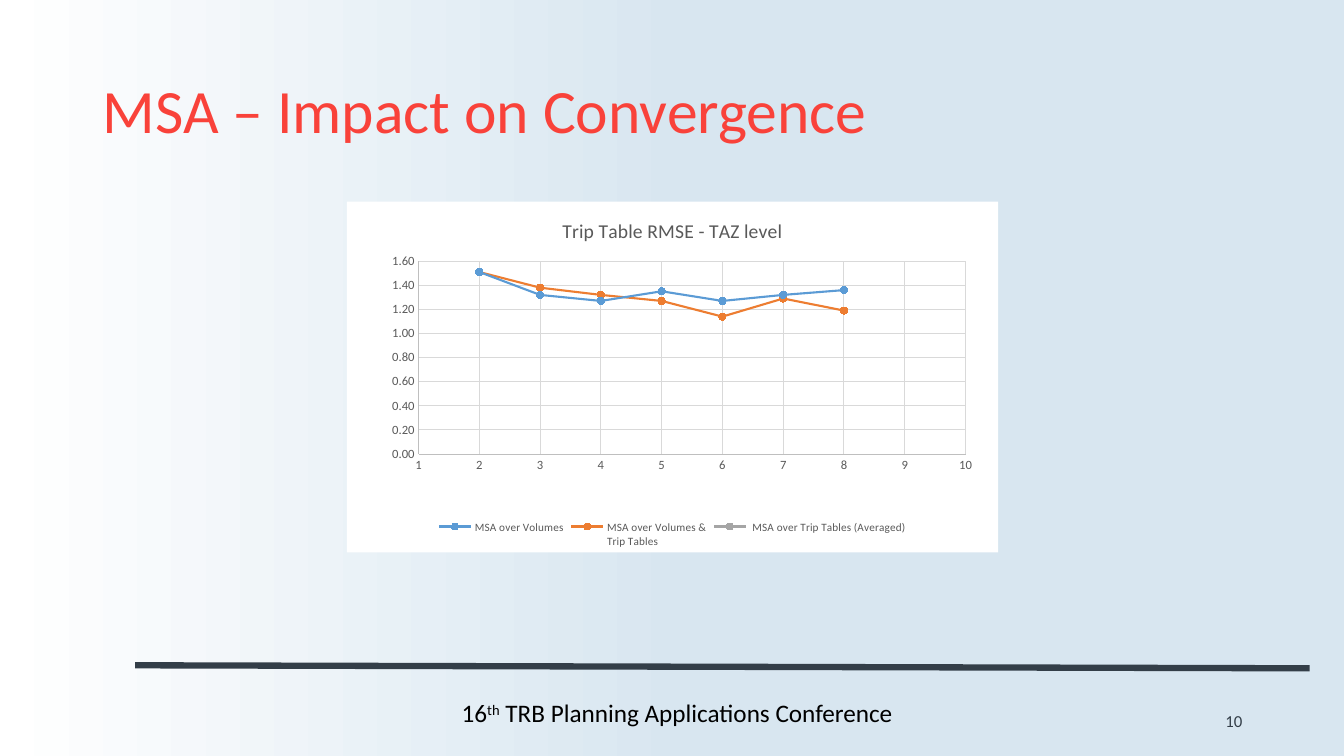
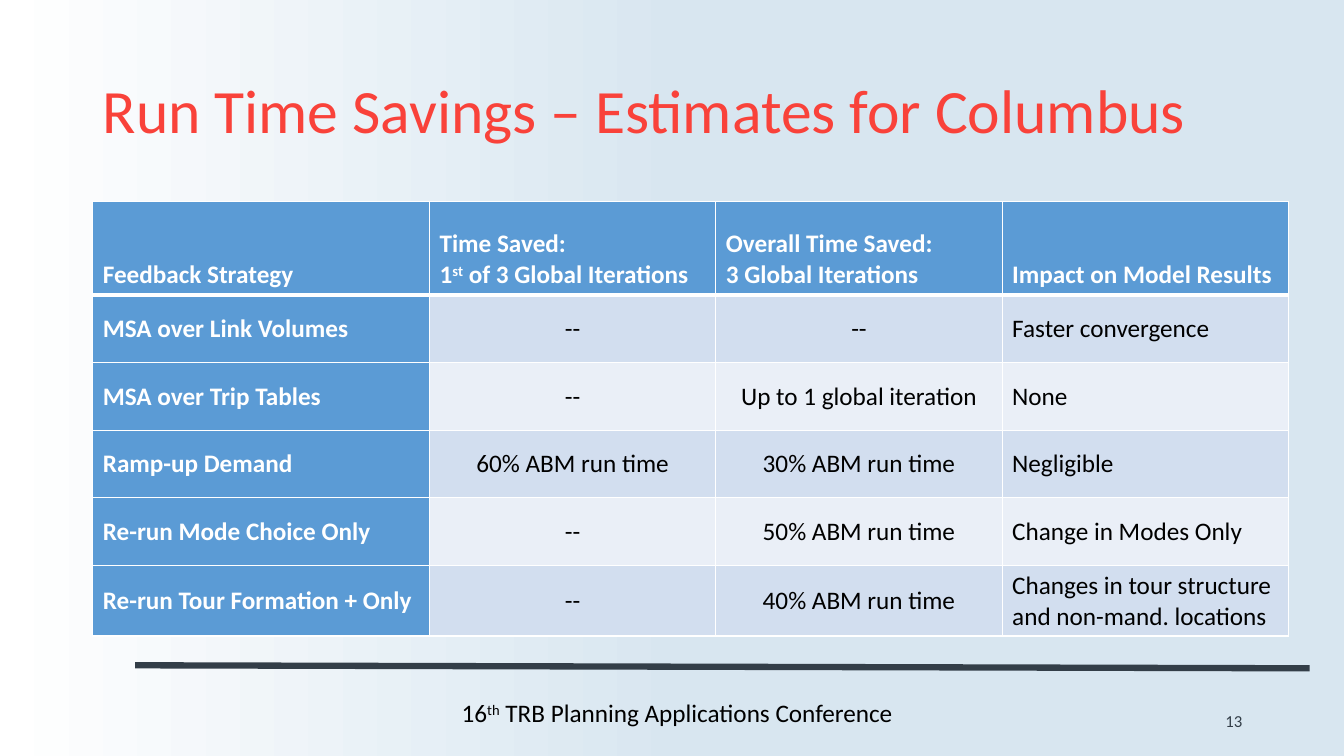
from copy import deepcopy
from dataclasses import dataclass

from lxml import etree
from pptx import Presentation
from pptx.chart.data import XyChartData
from pptx.dml.color import RGBColor
from pptx.enum.chart import XL_CHART_TYPE as ChartType
from pptx.enum.chart import XL_LEGEND_POSITION as LegendPosition
from pptx.enum.chart import XL_MARKER_STYLE as MarkerStyle
from pptx.enum.chart import XL_TICK_MARK as TickMark
from pptx.enum.shapes import MSO_CONNECTOR as Connector
from pptx.enum.text import MSO_ANCHOR as Anchor
from pptx.enum.text import MSO_AUTO_SIZE as AutoSize
from pptx.enum.text import PP_ALIGN as Align
from pptx.oxml.ns import qn
from pptx.util import Pt

EMU_PER_PX = 9144  # 100 px to the inch


@dataclass(frozen=True)
class Theme:
    font: str = "Calibri"
    white: str = "FFFFFF"
    black: str = "000000"
    mist: str = "D8E6F0"
    red: str = "F9423A"
    slate: str = "333E48"
    blue: str = "5B9BD5"
    orange: str = "ED7D31"
    gray: str = "A5A5A5"
    chart_text: str = "595959"
    axis: str = "BFBFBF"
    grid: str = "D9D9D9"
    bands: tuple = ("D2DEEF", "EAEFF7")
    title_size: int = 44
    body_size: int = 18
    chart_title_size: int = 14
    number_size: int = 12
    chart_size: int = 10
    axis_size: int = 9
    legend_size: int = 8


THEME = Theme()

# Content
ITERATIONS = range(2, 9)
RMSE_SERIES = [
    ("MSA over Volumes", THEME.blue,
     [1.51, 1.32, 1.27, 1.35, 1.27, 1.32, 1.36]),
    ("MSA over Volumes &\nTrip Tables", THEME.orange,
     [1.51, 1.38, 1.32, 1.27, 1.14, 1.29, 1.19]),
    (" MSA over Trip Tables (Averaged)", THEME.gray,
     [None] * len(ITERATIONS)),
]
# Text between carets is superscript
CONFERENCE = "16^th^ TRB Planning Applications Conference"
SAVINGS = [
    ("Feedback Strategy", "Time Saved:\n1^st^ of 3 Global Iterations",
     "Overall Time Saved:\n3 Global Iterations", "Impact on Model Results"),
    ("MSA over Link Volumes", "--", "--", "Faster convergence"),
    ("MSA over Trip Tables", "--", "Up to 1 global iteration", "None"),
    ("Ramp-up Demand", "60% ABM run time", "30% ABM run time", "Negligible"),
    ("Re-run Mode Choice Only", "--", "50% ABM run time",
     "Change in Modes Only"),
    ("Re-run Tour Formation + Only", "--", "40% ABM run time",
     "Changes in tour structure and non-mand. locations"),
]


# Shared helpers
def px(*lengths):
    return [length * EMU_PER_PX for length in lengths]


def rgb(color):
    return RGBColor.from_string(color)


def style_font(font, size, color, bold=False):
    font.name = THEME.font
    font.size = Pt(size)
    font.bold = bold
    font.color.rgb = rgb(color)


def style_line(line, color, width):
    line.color.rgb = rgb(color)
    line.width = Pt(width)


def write_text(frame, text, size, color, bold=False, align=Align.LEFT,
               line_spacing=None):
    for index, row in enumerate(text.split("\n")):
        paragraph = frame.add_paragraph() if index else frame.paragraphs[0]
        paragraph.alignment = align
        if line_spacing:
            paragraph.line_spacing = line_spacing
        for position, part in enumerate(row.split("^")):
            run = paragraph.add_run()
            run.text = part
            style_font(run.font, size, color, bold)
            if position % 2:
                run.font._element.set("baseline", "30000")


def add_label(slide, box, text, size, color, anchor=Anchor.MIDDLE, wrap=True,
              **paragraph_style):
    frame = slide.shapes.add_textbox(*px(*box)).text_frame
    frame.word_wrap = wrap
    frame.auto_size = AutoSize.NONE if wrap else AutoSize.SHAPE_TO_FIT_TEXT
    frame.vertical_anchor = anchor
    write_text(frame, text, size, color, **paragraph_style)


# Slide frame: background, rule, footer, title and number
def paint_background(slide):
    fill = slide.background.fill
    fill.gradient()
    fill.gradient_angle = 0
    start, end = fill.gradient_stops
    start.color.rgb, start.position = rgb(THEME.white), 0
    end.color.rgb, end.position = rgb(THEME.mist), 1
    last = slide.element.find(".//" + qn("a:gsLst"))[-1]
    middle = deepcopy(last)
    middle.set("pos", "51000")
    last.addprevious(middle)


def add_framed_slide(deck, title, number):
    slide = deck.slides.add_slide(deck.slide_layouts[6])
    paint_background(slide)
    rule = slide.shapes.add_connector(
        Connector.STRAIGHT, *px(134, 660, 1299, 663))
    style_line(rule.line, THEME.slate, 4.5)
    etree.SubElement(rule._element.spPr, qn("a:effectLst"))
    add_label(slide, (448, 687, 462, 40), CONFERENCE, THEME.body_size,
              THEME.black, anchor=Anchor.TOP, wrap=False)
    add_label(slide, (92, 40, 1150, 145), title, THEME.title_size, THEME.red,
              line_spacing=0.9)
    add_label(slide, (942, 695, 300, 40), str(number), THEME.number_size,
              THEME.slate, align=Align.RIGHT)
    return slide


# Convergence chart
def style_axis(axis, low, high, step, number_format):
    axis.minimum_scale, axis.maximum_scale = low, high
    axis.major_unit = step
    axis.major_tick_mark = axis.minor_tick_mark = TickMark.NONE
    axis.has_major_gridlines = True
    style_line(axis.major_gridlines.format.line, THEME.grid, 0.75)
    style_line(axis.format.line, THEME.axis, 0.75)
    style_font(axis.tick_labels.font, THEME.axis_size, THEME.chart_text)
    axis.tick_labels.number_format = number_format
    axis.tick_labels.number_format_is_linked = False


def style_series(series, color):
    series.smooth = False
    style_line(series.format.line, color, 1.5)
    series.marker.style = MarkerStyle.CIRCLE
    series.marker.size = 5
    series.marker.format.fill.solid()
    series.marker.format.fill.fore_color.rgb = rgb(color)
    style_line(series.marker.format.line, color, 0.75)


def drop_empty_points(chart):
    for point in list(chart.element.iter(qn("c:pt"))):
        if point.findtext(qn("c:v")) in ("None", ""):
            point.getparent().remove(point)


def place_plot(chart, **bounds):
    plot_area = chart.element.find(".//" + qn("c:plotArea"))
    for old_layout in plot_area.findall(qn("c:layout")):
        plot_area.remove(old_layout)
    layout = etree.Element(qn("c:layout"))
    plot_area.insert(0, layout)
    manual = etree.SubElement(layout, qn("c:manualLayout"))
    settings = {"layoutTarget": "inner", "xMode": "edge", "yMode": "edge",
                **bounds}
    for tag, value in settings.items():
        etree.SubElement(manual, qn("c:" + tag)).set("val", str(value))


def fill_chart(chart, color):
    properties = etree.Element(qn("c:spPr"))
    solid = etree.SubElement(properties, qn("a:solidFill"))
    etree.SubElement(solid, qn("a:srgbClr")).set("val", color)
    outline = etree.SubElement(properties, qn("a:ln"))
    etree.SubElement(outline, qn("a:noFill"))
    chart.element.find(qn("c:chart")).addnext(properties)


def add_rmse_chart(slide):
    data = XyChartData(number_format="0.00")
    for name, _, values in RMSE_SERIES:
        series = data.add_series(name)
        for iteration, value in zip(ITERATIONS, values):
            series.add_data_point(iteration, value)
    chart = slide.shapes.add_chart(
        ChartType.XY_SCATTER_LINES, *px(344, 200, 646, 348), data).chart
    drop_empty_points(chart)
    style_font(chart.font, THEME.chart_size, THEME.black)
    fill_chart(chart, THEME.white)

    chart.has_title = True
    write_text(chart.chart_title.text_frame, "Trip Table RMSE - TAZ level",
               THEME.chart_title_size, THEME.chart_text, align=Align.CENTER)
    chart.chart_title.include_in_layout = False
    chart.has_legend = True
    chart.legend.position = LegendPosition.BOTTOM
    chart.legend.include_in_layout = False
    style_font(chart.legend.font, THEME.legend_size, THEME.chart_text)

    style_axis(chart.category_axis, 1, 10, 1, "General")
    style_axis(chart.value_axis, 0, 1.6, 0.2, "0.00")
    plot = chart.plots[0]
    plot.vary_by_categories = False
    for series, (_, color, _) in zip(plot.series, RMSE_SERIES):
        style_series(series, color)
    place_plot(chart, x=0.11, y=0.17, w=0.84, h=0.55)


# Savings table
def add_borders(cell, top, bottom):
    properties = cell._tc.get_or_add_tcPr()
    for side, width in zip("LRTB", (1, 1, top, bottom)):
        border = etree.SubElement(properties, qn("a:ln" + side))
        border.set("w", str(Pt(width)))
        solid = etree.SubElement(border, qn("a:solidFill"))
        etree.SubElement(solid, qn("a:srgbClr")).set("val", THEME.white)


def fill_cell(cell, text, row, column):
    is_header = row == 0
    is_heading = is_header or column == 0
    add_borders(cell, 3 if row == 1 else 1, 3 if is_header else 1)
    cell.fill.solid()
    cell.fill.fore_color.rgb = rgb(
        THEME.blue if is_heading else THEME.bands[(row - 1) % 2])
    cell.vertical_anchor = Anchor.BOTTOM if is_header else Anchor.MIDDLE
    centred = not is_header and column in (1, 2)
    write_text(cell.text_frame, text, THEME.body_size,
               THEME.white if is_heading else THEME.black, bold=is_heading,
               align=Align.CENTER if centred else Align.LEFT)


def add_savings_table(slide):
    widths = px(334, *[284] * 3)
    heights = px(93, *[67] * (len(SAVINGS) - 1))
    table = slide.shapes.add_table(
        len(heights), len(widths), *px(92, 200),
        sum(widths), sum(heights)).table
    for column, width in zip(table.columns, widths):
        column.width = width
    for row, height in zip(table.rows, heights):
        row.height = height
    for row, texts in enumerate(SAVINGS):
        for column, text in enumerate(texts):
            fill_cell(table.cell(row, column), text, row, column)


def main():
    deck = Presentation()
    deck.slide_width, deck.slide_height = px(1333, 750)
    add_rmse_chart(add_framed_slide(deck, "MSA – Impact on Convergence", 10))
    add_savings_table(add_framed_slide(
        deck, "Run Time Savings – Estimates for Columbus", 13))
    deck.save("out.pptx")


if __name__ == "__main__":
    main()
